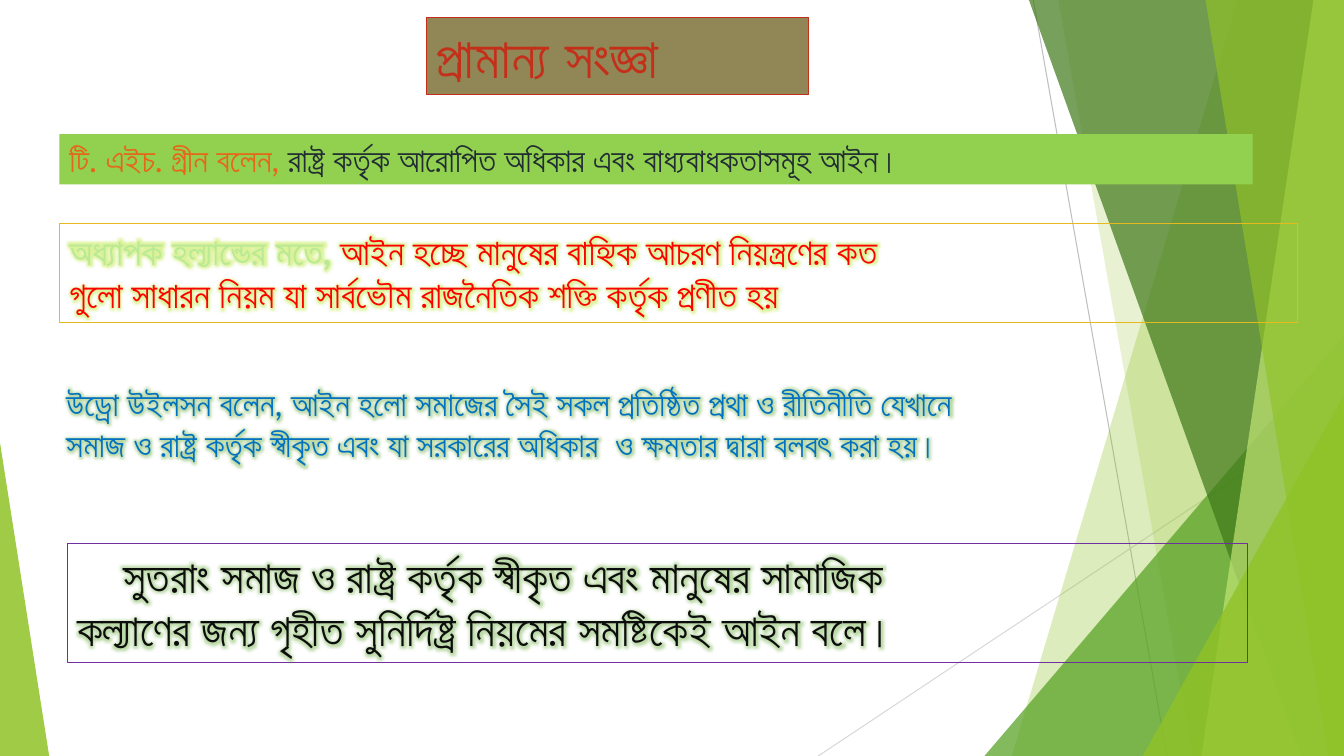
from dataclasses import dataclass

from lxml import etree
from pptx import Presentation
from pptx.dml.color import RGBColor
from pptx.enum.shapes import MSO_CONNECTOR, MSO_SHAPE
from pptx.enum.text import MSO_ANCHOR, MSO_AUTO_SIZE, PP_ALIGN
from pptx.oxml.ns import qn
from pptx.util import Cm, Pt

STRAIGHT = MSO_CONNECTOR.STRAIGHT
TRIANGLE, RECTANGLE = MSO_SHAPE.ISOSCELES_TRIANGLE, MSO_SHAPE.RECTANGLE
TOP, LEFT, NO_AUTOSIZE = MSO_ANCHOR.TOP, PP_ALIGN.LEFT, MSO_AUTO_SIZE.NONE

WIDTH, HEIGHT = 33.87, 19.05
FONT = "Lato"
TITLE_ONLY = 5


@dataclass
class Ray:
    start: tuple[float, float]
    end: tuple[float, float]
    color: str


@dataclass
class Facet:
    """Four-sided panel that reaches the right edge of the slide."""
    top_x: float
    bottom_x: float
    color: str
    opacity: int


@dataclass
class Wedge:
    """Triangle whose apex sits at a fraction of its width."""
    box: tuple[float, float, float, float]
    apex: float
    color: str
    opacity: int


@dataclass
class Statement:
    box: tuple[float, float, float, float]
    size: int
    lines: list[list[tuple[str, str]]]  # each line holds (text, colour) pairs
    fill: str | None = None
    border: str | None = None
    bold_lead: bool = False
    glow: str | None = None
    first_indent: float = 0


RAYS = [
    Ray((26.04, 0), (29.41, HEIGHT), "BFBFBF"),
    Ray((WIDTH, 10.24), (20.62, HEIGHT), "D9D9D9"),
]
PANELS = [
    Facet(31.19, 25.5, "90C226", 30),
    Facet(26.67, 30.05, "90C226", 20),
    Wedge((24.81, 8.46, 9.05, 10.59), 1, "54A021", 72),
    Facet(25.93, 32.79, "3F7819", 70),
    Facet(33.1, 30.28, "C0E474", 70),
    Facet(30.38, 33.48, "90C226", 65),
    Wedge((28.8, 9.98, 5.06, 9.07), 1, "90C226", 80),
    Wedge((0, 11.15, 1.24, 7.9), 0, "90C226", 85),
]

HEADING = Statement((10.74, 0.43, 9.63, 1.96), 40,
                    [[("প্রামান্য সংজ্ঞা", "C42F1A")]],
                    fill="918655", border="C42F1A", bold_lead=True)
DEFINITIONS = [
    Statement((1.5, 3.38, 30.07, 1.27), 24,
              [[("টি. এইচ. গ্রীন বলেন, ", "E76618"),
                ("রাষ্ট্র কর্তৃক আরোপিত অধিকার এবং বাধ্যবাধকতাসমূহ আইন।", "212D32")]],
              fill="92D050"),
    Statement((1.5, 5.64, 31.19, 2.49), 26,
              [[("অধ্যাপক হল্যান্ডের মতে, ", "B7E996"),
                ("আইন হচ্ছে মানুষের বাহ্যিক আচরণ নিয়ন্ত্রণের কত", "FF0000")],
               [("গুলো সাধারন নিয়ম যা সার্বভৌম রাজনৈতিক শক্তি কর্তৃক প্রণীত হয়", "FF0000")]],
              border="E6B91E", bold_lead=True, glow="A8E000"),
    Statement((1.42, 9.53, 32.11, 2.31), 24,
              [[("উড্রো উইলসন বলেন, আইন হলো সমাজের সৈই সকল প্রতিষ্ঠিত প্রথা ও রীতিনীতি যেখানে", "0070C0")],
               [("সমাজ ও রাষ্ট্র কর্তৃক স্বীকৃত এবং যা সরকারের অধিকার  ও ক্ষমতার দ্বারা বলবৎ করা হয়।", "0070C0")]],
              glow="54A021"),
    Statement((1.7, 13.69, 29.74, 3), 32,
              [[("সুতরাং সমাজ ও রাষ্ট্র কর্তৃক স্বীকৃত এবং মানুষের সামাজিক", "0D0D0D")],
               [("কল্যাণের জন্য গৃহীত সুনির্দিষ্ট্র নিয়মের সমষ্টিকেই আইন বলে।", "0D0D0D")]],
              border="7030A0", glow="54A021", first_indent=1.16),
]


def rgb(color: str) -> RGBColor:
    return RGBColor.from_string(color)


def add_alpha(color_element, opacity: int) -> None:
    etree.SubElement(color_element, qn("a:alpha"), val=str(opacity * 1000))


def draw_ray(slide, ray: Ray) -> None:
    line = slide.shapes.add_connector(STRAIGHT, *map(Cm, ray.start + ray.end))
    line.line.color.rgb = rgb(ray.color)
    line.line.width = Pt(0.75)
    etree.SubElement(line._element.spPr, qn("a:effectLst"))


def draw_panel(slide, panel: Facet | Wedge) -> None:
    if isinstance(panel, Facet):
        builder = slide.shapes.build_freeform(Cm(panel.top_x), 0)
        corners = [(WIDTH, 0), (WIDTH, HEIGHT), (panel.bottom_x, HEIGHT)]
        builder.add_line_segments([(Cm(x), Cm(y)) for x, y in corners])
        shape = builder.convert_to_shape()
    else:
        shape = slide.shapes.add_shape(TRIANGLE, *map(Cm, panel.box))
        shape.adjustments[0] = panel.apex
    shape.shadow.inherit = False
    shape.line.fill.background()
    shape.fill.solid()
    shape.fill.fore_color.rgb = rgb(panel.color)
    add_alpha(shape._element.spPr.find(".//" + qn("a:srgbClr")), panel.opacity)


def add_glow(run, color: str) -> None:
    properties = run._r.get_or_add_rPr()
    effects = etree.Element(qn("a:effectLst"))
    glow = etree.SubElement(effects, qn("a:glow"), rad=str(Pt(8)))
    add_alpha(etree.SubElement(glow, qn("a:srgbClr"), val=color), 40)
    fill = properties.find(qn("a:solidFill"))
    fill.addnext(effects)


def format_statement(shape, statement: Statement) -> None:
    shape.left, shape.top, shape.width, shape.height = map(Cm, statement.box)
    if statement.fill:
        shape.fill.solid()
        shape.fill.fore_color.rgb = rgb(statement.fill)
    else:
        shape.fill.background()
    if statement.border:
        shape.line.color.rgb = rgb(statement.border)
        shape.line.width = Pt(0.75)
    else:
        shape.line.fill.background()

    frame = shape.text_frame
    frame.word_wrap = True
    frame.auto_size = NO_AUTOSIZE
    frame.vertical_anchor = TOP
    for row, pieces in enumerate(statement.lines):
        paragraph = frame.add_paragraph() if row else frame.paragraphs[0]
        paragraph.alignment = LEFT
        paragraph.font.name = FONT
        paragraph.font.size = Pt(statement.size)
        if row == 0 and statement.first_indent:
            paragraph._p.get_or_add_pPr().set("indent", str(Cm(statement.first_indent)))
        for column, (text, color) in enumerate(pieces):
            run = paragraph.add_run()
            run.text = text
            run.font.color.rgb = rgb(color)
            run.font.bold = statement.bold_lead and row == column == 0
            if statement.glow:
                add_glow(run, statement.glow)


def main() -> None:
    presentation = Presentation()
    presentation.slide_width, presentation.slide_height = Cm(WIDTH), Cm(HEIGHT)
    slide = presentation.slides.add_slide(presentation.slide_layouts[TITLE_ONLY])

    # Background facets
    for ray in RAYS:
        draw_ray(slide, ray)
    for panel in PANELS:
        draw_panel(slide, panel)

    # Heading and definitions
    format_statement(slide.shapes.title, HEADING)
    for definition in DEFINITIONS:
        box = slide.shapes.add_shape(RECTANGLE, *map(Cm, definition.box))
        box.shadow.inherit = False
        format_statement(box, definition)

    presentation.save("out.pptx")


if __name__ == "__main__":
    main()
